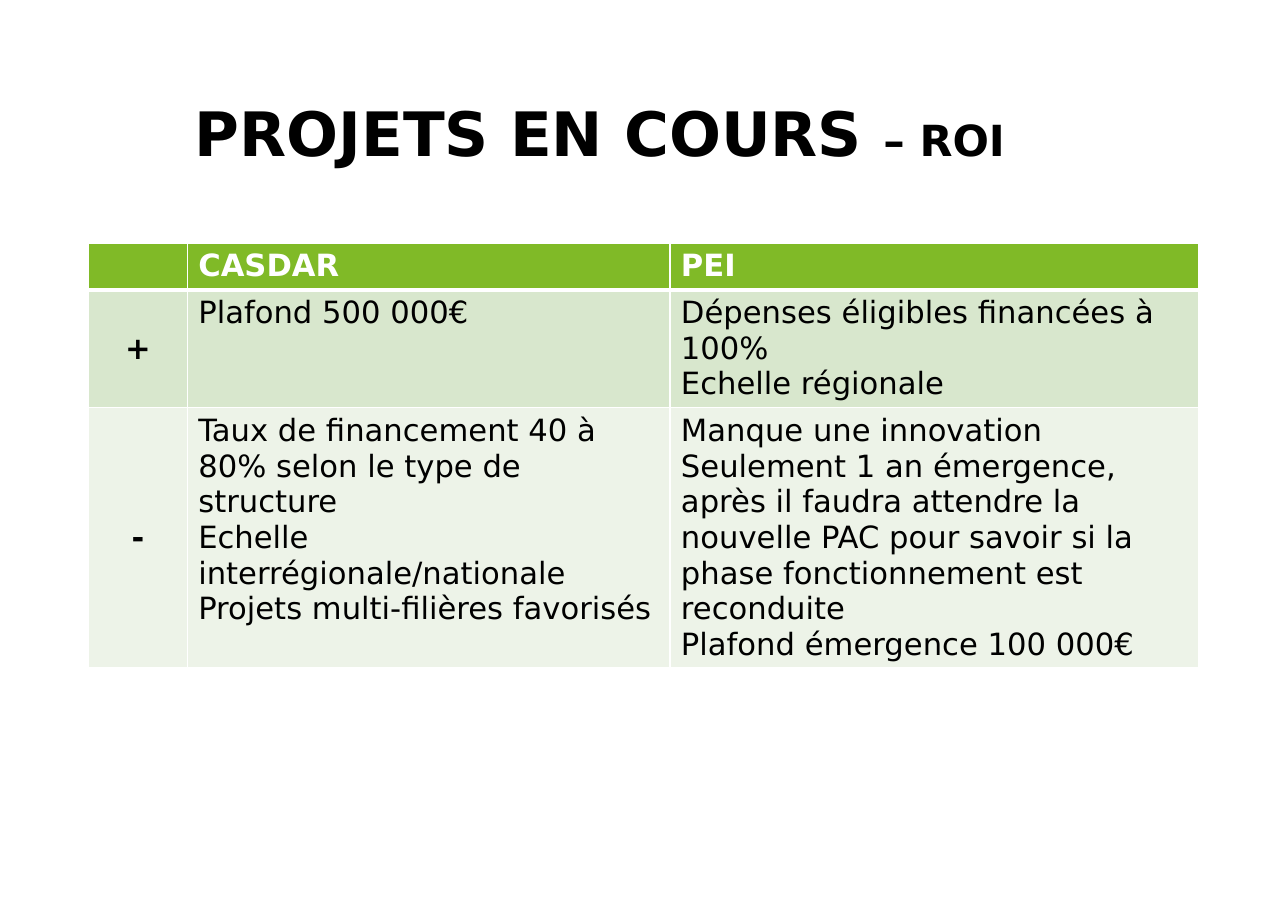
from lxml import etree
from pptx import Presentation
from pptx.dml.color import RGBColor as RGB
from pptx.enum.text import MSO_ANCHOR as ANCHOR, MSO_AUTO_SIZE as AUTO, PP_ALIGN as ALIGN
from pptx.oxml.ns import qn
from pptx.util import Cm, Pt

FONT = "DejaVu Sans"
COLORS = {"text": "000000", "white": "FFFFFF", "header": "80BA27",
          "plus": "D8E7CD", "minus": "EDF3E8"}
COLUMN_WIDTHS = (2.28, 11.13, 12.2)
# Fill, height in cm, cell texts with one line per paragraph
ROWS = (
    ("header", 1.04, ("", "CASDAR", "PEI")),
    ("plus", 2.72, ("+", "Plafond 500 000€",
                    "Dépenses éligibles financées à 100%\nEchelle régionale")),
    ("minus", 6, ("-",
                  "Taux de financement 40 à 80% selon le type de structure\n"
                  "Echelle interrégionale/nationale\n"
                  "Projets multi-filières favorisés",
                  "Manque une innovation\n"
                  "Seulement 1 an émergence, après il faudra attendre la nouvelle PAC "
                  "pour savoir si la phase fonctionnement est reconduite\n"
                  "Plafond émergence 100 000€")),
)


def color(name):
    return RGB.from_string(COLORS[name])


def set_font(font, size, color_name, bold):
    font.name, font.size, font.bold = FONT, Pt(size), bold
    font.color.rgb = color(color_name)


def add_title(s):
    title = s.shapes.title
    title.left, title.top, title.width, title.height = Cm(4.24), Cm(1.12), Cm(23.42), Cm(4.06)
    tf = title.text_frame
    tf.auto_size, tf.word_wrap, tf.vertical_anchor = AUTO.NONE, True, ANCHOR.MIDDLE
    p = tf.paragraphs[0]
    p.alignment, p.line_spacing = ALIGN.LEFT, 0.9
    for text, size in (("PROJETS EN COURS ", 40), ("– ROI", 28)):
        r = p.add_run()
        r.text = text
        set_font(r.font, size, "text", True)


def set_borders(cell, bottom):
    """Draw white cell borders; call before the fill, which must follow them."""
    tc_pr = cell._tc.get_or_add_tcPr()
    for side, width in (("L", 1), ("R", 1), ("T", 1), ("B", bottom)):
        ln = etree.SubElement(tc_pr, qn(f"a:ln{side}"), w=str(Pt(width)))
        fill = etree.SubElement(ln, qn("a:solidFill"))
        etree.SubElement(fill, qn("a:srgbClr"), val=COLORS["white"])


def fill_cell(cell, text, fill_name, is_label):
    is_header = fill_name == "header"
    set_borders(cell, 3 if is_header else 1)
    cell.fill.solid()
    cell.fill.fore_color.rgb = color(fill_name)
    cell.text = text
    centred = is_label and not is_header
    cell.vertical_anchor = ANCHOR.MIDDLE if centred else ANCHOR.TOP
    for p in cell.text_frame.paragraphs:
        p.alignment = ALIGN.CENTER if centred else ALIGN.LEFT
        set_font(p.font, 20, "white" if is_header else "text", is_header or is_label)


def add_comparison(s):
    height = sum(row[1] for row in ROWS)
    table = s.shapes.add_table(len(ROWS), len(COLUMN_WIDTHS), Cm(2.04), Cm(5.6),
                               Cm(sum(COLUMN_WIDTHS)), Cm(height)).table
    for column, width in zip(table.columns, COLUMN_WIDTHS):
        column.width = Cm(width)
    for row, (fill_name, row_height, texts) in zip(table.rows, ROWS):
        row.height = Cm(row_height)
        for i, (cell, text) in enumerate(zip(row.cells, texts)):
            fill_cell(cell, text, fill_name, i == 0)


def main():
    prs = Presentation()
    prs.slide_width, prs.slide_height = Cm(29.7), Cm(21)
    s = prs.slides.add_slide(prs.slide_layouts.get_by_name("Title Only"))
    add_title(s)
    add_comparison(s)
    prs.save("out.pptx")


if __name__ == "__main__":
    main()
